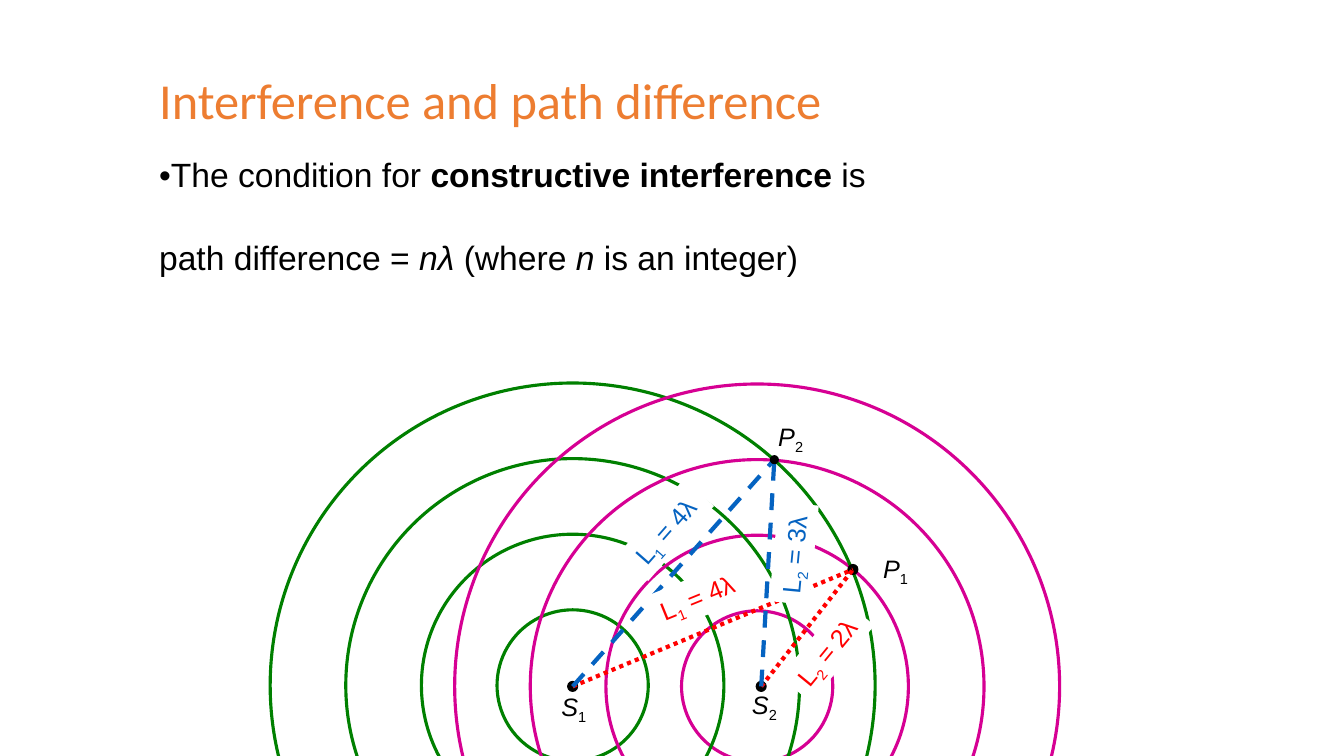
import pptx
import pptx.util
import pptx.dml.color
import pptx.enum.dml
import pptx.enum.shapes
import pptx.enum.text
import pptx.oxml.ns
import lxml.etree
from dataclasses import dataclass

Inches = pptx.util.Inches
Pt = pptx.util.Pt
MSO_SHAPE = pptx.enum.shapes.MSO_SHAPE
MSO_LINE = pptx.enum.dml.MSO_LINE


@dataclass(frozen=True)
class Theme:
    black: str = "000000"
    white: str = "FFFFFF"
    title: str = "ED7D31"
    green: str = "008000"
    magenta: str = "D60093"
    red: str = "FF0000"
    blue: str = "0563C1"
    title_font: str = "Calibri"
    body_font: str = "Arial"
    title_size: int = 36
    body_size: int = 24
    label_size: int = 18


def rgb(color):
    return pptx.dml.color.RGBColor.from_string(color)


def add_run(p, text, font, size, color, bold=False, italic=False, sub=False):
    r = p.add_run()
    r.text = text
    r.font.name = font
    r.font.size = Pt(size)
    r.font.color.rgb = rgb(color)
    r.font.bold = bold
    r.font.italic = italic
    if sub:
        r._r.get_or_add_rPr().set("baseline", "-25000")


class WaveSlide:
    """Draws styled elements on the current slide."""

    def __init__(self, prs, theme):
        self.theme = theme
        self.shapes = prs.slides.add_slide(prs.slide_layouts[6]).shapes

    def circle(self, center, radius, color, width, filled=False):
        x, y = center
        s = self.shapes.add_shape(
            MSO_SHAPE.OVAL, Inches(x - radius), Inches(y - radius),
            Inches(2 * radius), Inches(2 * radius))
        s.shadow.inherit = False
        if filled:
            s.fill.solid()
            s.fill.fore_color.rgb = rgb(color)
        else:
            s.fill.background()
        s.line.color.rgb = rgb(color)
        s.line.width = Pt(width)

    def dot(self, center, radius=0.05):
        self.circle(center, radius, self.theme.black, 0.75, filled=True)

    def ray(self, start, end, color, dash):
        c = self.shapes.add_connector(
            pptx.enum.shapes.MSO_CONNECTOR.STRAIGHT,
            *(Inches(v) for v in (*start, *end)))
        c.line.color.rgb = rgb(color)
        c.line.width = Pt(3)
        c.line.dash_style = dash
        lxml.etree.SubElement(c._element.spPr, pptx.oxml.ns.qn("a:effectLst"))

    def text_box(self, left, top, width, height):
        sp = self.shapes.add_textbox(*(Inches(v) for v in (left, top, width, height)))
        sp.text_frame.word_wrap = True
        return sp.text_frame

    def label(self, left, top, width, parts, color, rotation=0, filled=False):
        sp = self.shapes.add_textbox(Inches(left), Inches(top), Inches(width), Inches(0.4))
        sp.rotation = rotation
        if filled:
            sp.fill.solid()
            sp.fill.fore_color.rgb = rgb(self.theme.white)
        tf = sp.text_frame
        tf.word_wrap = False
        tf.auto_size = pptx.enum.text.MSO_AUTO_SIZE.SHAPE_TO_FIT_TEXT
        for text, style in parts:
            add_run(tf.paragraphs[0], text, self.theme.body_font,
                    self.theme.label_size, color, **style)

    def point_label(self, left, top, letter, index):
        parts = [(letter, {"italic": True}), (index, {"sub": True})]
        self.label(left, top, 0.46, parts, self.theme.black)

    def length_label(self, left, top, index, length, color, rotation):
        parts = [("L", {}), (index, {"sub": True}), (f" = {length}", {})]
        self.label(left, top, 0.99, parts, color, rotation, filled=True)

    def title(self, text):
        tf = self.text_box(1.48, 0.58, 9.44, 0.81)
        tf.vertical_anchor = pptx.enum.text.MSO_ANCHOR.MIDDLE
        add_run(tf.paragraphs[0], text, self.theme.title_font,
                self.theme.title_size, self.theme.title)

    def body(self, lines, gap):
        tf = self.text_box(1.48, 1.45, 9.25, 1.96)
        tf.margin_top = Inches(0.08)
        for i, parts in enumerate(lines):
            p = tf.add_paragraph() if i else tf.paragraphs[0]
            p.space_before = Pt(gap if i else 0)
            for text, style in parts:
                add_run(p, text, self.theme.body_font, self.theme.body_size,
                        self.theme.black, **style)


def main():
    prs = pptx.Presentation()
    prs.slide_width = Inches(13.33)
    prs.slide_height = Inches(7.5)
    theme = Theme()
    slide = WaveSlide(prs, theme)

    s1, s2 = (5.68, 6.81), (7.55, 6.81)
    p1, p2 = (8.46, 5.65), (7.68, 4.56)
    wavelength = 0.75

    for point in (s1, s2):
        slide.dot(point)
    for n in range(1, 5):
        for center, color in (((5.68, 6.8), theme.green), ((7.51, 6.81), theme.magenta)):
            slide.circle(center, n * wavelength, color, 2.25)
    slide.dot(p1)

    for point, color, dash in ((p1, theme.red, MSO_LINE.ROUND_DOT),
                               (p2, theme.blue, MSO_LINE.DASH)):
        for source in (s1, s2):
            slide.ray(source, point, color, dash)

    for args in ((7.71, 6.26, "2", "2λ", theme.red, 309.3),
                 (7.38, 5.29, "2", "3λ", theme.blue, 275.5),
                 (6.43, 5.72, "1", "4λ", theme.red, 337.8),
                 (6.11, 5.06, "1", "4λ", theme.blue, 311.3)):
        slide.length_label(*args)

    slide.dot(p2, radius=0.04)
    for args in ((5.47, 6.81, "S", "1"), (7.36, 6.79, "S", "2"),
                 (8.66, 5.44, "P", "1"), (7.62, 4.13, "P", "2")):
        slide.point_label(*args)

    slide.title("Interference and path difference")
    slide.body([
        [("•The condition for ", {}),
         ("constructive interference", {"bold": True}),
         (" is", {})],
        [("path difference = ", {}),
         ("nλ ", {"italic": True}),
         ("(where ", {}),
         ("n", {"italic": True}),
         (" is an integer)", {})],
    ], gap=30)

    prs.save("out.pptx")


if __name__ == "__main__":
    main()
